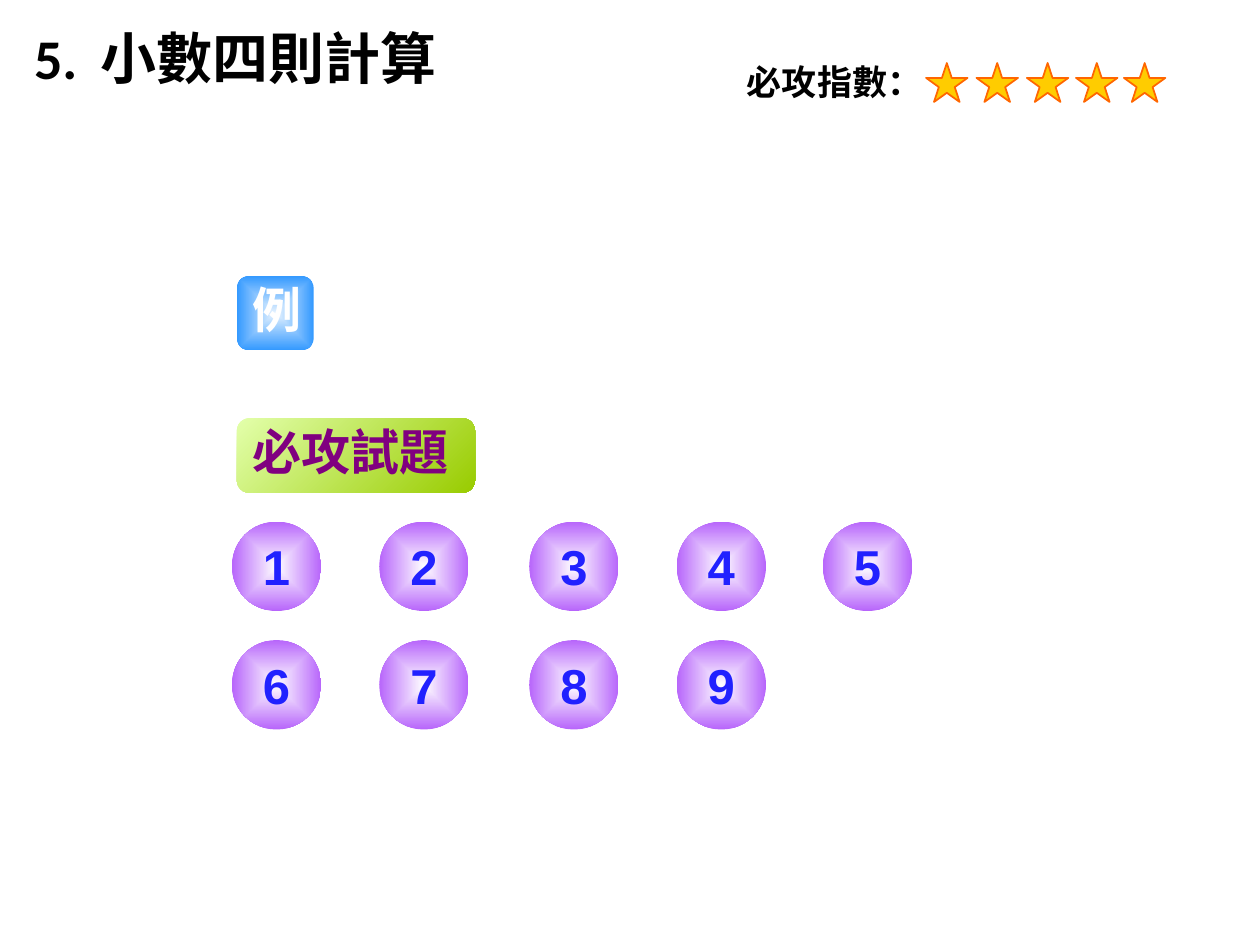
import pptx
import pptx.util
import pptx.dml.color
import pptx.enum.shapes
import pptx.enum.text
import pptx.oxml.ns
import lxml.etree

Inches = pptx.util.Inches
Pt = pptx.util.Pt
Shape = pptx.enum.shapes.MSO_SHAPE
Align = pptx.enum.text.PP_ALIGN
Anchor = pptx.enum.text.MSO_ANCHOR
qn = pptx.oxml.ns.qn

COLORS = {
    "text": "000000", "star": "FFCC00", "star_edge": "FF6600",
    "ball_in": "FFFFFF", "ball_out": "B765FB", "number": "2121FF",
    "tag_start": "E3FFAB", "tag_end": "99CC00", "tag_text": "800080",
    "example_in": "E5F2FF", "example_out": "3399FF", "example_text": "FFFFFF",
}
COLORS = {name: pptx.dml.color.RGBColor.from_string(value) for name, value in COLORS.items()}


def write(box, runs, size, color, frame_format, para_format):
    for name, value in frame_format.items():
        setattr(box.text_frame, name, value)
    para = box.text_frame.paragraphs[0]
    for name, value in para_format.items():
        setattr(para, name, value)
    for text, font_name in runs:
        span = para.add_run()
        span.text = text
        span.font.color.rgb = COLORS[color]
        for name, value in {"name": font_name, "size": Pt(size), "bold": True}.items():
            setattr(span.font, name, value)
        east_asian = lxml.etree.SubElement(span.font._element, qn("a:ea"))
        east_asian.set("typeface", font_name)


def add_gradient_shape(kind, position, start, end, angle=None):
    shape = page.shapes.add_shape(kind, *map(Inches, position))
    shape.shadow.inherit = False
    shape.line.fill.background()
    shape.fill.gradient()
    for stop, color in zip(shape.fill.gradient_stops, (start, end)):
        stop.color.rgb = COLORS[color]
    if angle is not None:
        shape.fill.gradient_angle = angle
    else:
        gradient = shape._element.spPr.find(qn("a:gradFill"))
        gradient.remove(gradient.find(qn("a:lin")))
        radial = lxml.etree.SubElement(gradient, qn("a:path"))
        radial.set("path", "shape")
        center = lxml.etree.SubElement(radial, qn("a:fillToRect"))
        for side in "ltrb":
            center.set(side, "50000")
    return shape


deck = pptx.Presentation()
deck.slide_width, deck.slide_height = Inches(10), Inches(7.5)
page = deck.slides.add_slide(deck.slide_layouts[5])

top_frame = {"word_wrap": True, "vertical_anchor": Anchor.TOP,
             "auto_size": pptx.enum.text.MSO_AUTO_SIZE.NONE}
title = page.shapes.title
title.left, title.top, title.width, title.height = map(Inches, (0.17, 0.14, 6.56, 0.82))
title_runs = [("5.", "Calibri"), (" ", "Calibri"), ("小數四則計算", "Noto Sans CJK TC")]
write(title, title_runs, 32, "text", top_frame, {"alignment": Align.LEFT})
title.text_frame.paragraphs[0].runs[1].font._element.set("spc", "600")

rating = page.shapes.add_textbox(*map(Inches, (5.83, 0.43, 1.89, 0.46)))
write(rating, [("必攻指數：", "Noto Sans CJK TC")], 20, "text", top_frame, {"alignment": Align.LEFT})

for left in (7.35, 7.75, 8.15, 8.54, 8.92):
    star = page.shapes.add_shape(Shape.STAR_5_POINT, *map(Inches, (left, 0.5, 0.33, 0.31)))
    star.shadow.inherit = False
    star.fill.solid()
    star.fill.fore_color.rgb = COLORS["star"]
    star.line.color.rgb = COLORS["star_edge"]
    star.line.width = Pt(1)

example = add_gradient_shape(Shape.ROUNDED_RECTANGLE, (1.88, 2.19, 0.61, 0.59),
                             "example_in", "example_out")
write(example, [("例", "Noto Sans CJK SC")], 28, "example_text", top_frame,
      {"alignment": Align.CENTER, "line_spacing": Pt(30)})

practice = add_gradient_shape(Shape.ROUNDED_RECTANGLE, (1.88, 3.32, 1.89, 0.59),
                              "tag_start", "tag_end", 315)
write(practice, [("必攻試題", "Noto Sans CJK SC")], 28, "tag_text", top_frame,
      {"alignment": Align.LEFT, "line_spacing": Pt(30)})

column_lefts = (1.84, 3.01, 4.2, 5.37, 6.53)
row_tops = (4.14, 5.08)
for index in range(9):
    row, column = divmod(index, len(column_lefts))
    ball = add_gradient_shape(Shape.OVAL, (column_lefts[column], row_tops[row], 0.71, 0.71),
                              "ball_in", "ball_out")
    write(ball, [(str(index + 1), "Arial")], 28, "number",
          {"word_wrap": False, "vertical_anchor": Anchor.MIDDLE}, {"alignment": Align.CENTER})

deck.save("out.pptx")
